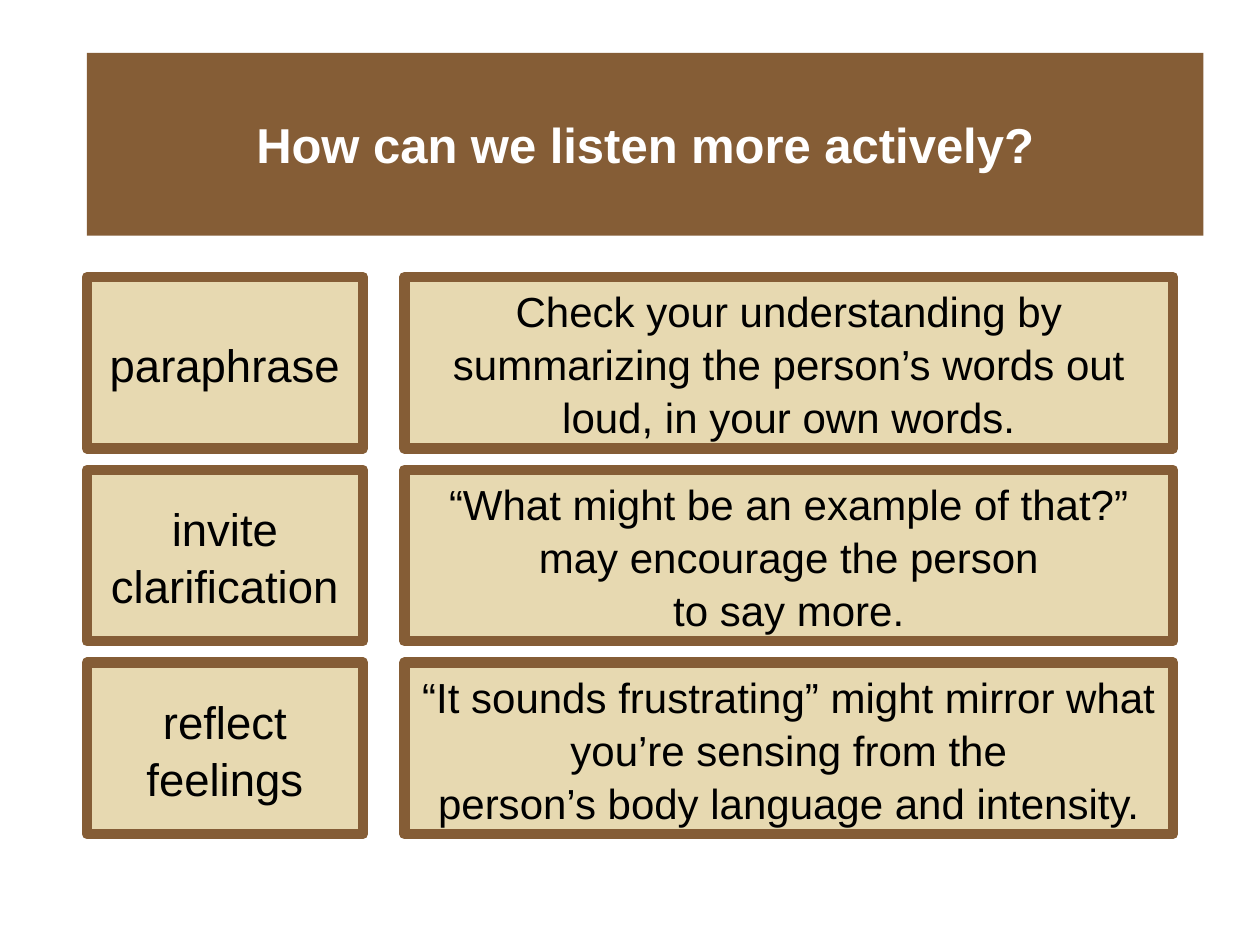
from pptx import Presentation
from pptx.dml.color import RGBColor
from pptx.enum.shapes import MSO_SHAPE
from pptx.enum.text import MSO_ANCHOR, PP_ALIGN
from pptx.util import Inches, Pt

TITLE = "How can we listen more actively?"
TECHNIQUES = [
    ("paraphrase",
     ["Check your understanding by summarizing the person’s words out loud, in your own words."]),
    ("invite clarification",
     ["“What might be an example of that?” may encourage the person", "to say more."]),
    ("reflect feelings",
     ["“It sounds frustrating” might mirror what you’re sensing from the",
      "person’s body language and intensity."]),
]

FONT = "Arial"
BROWN, SAND, WHITE, BLACK = "855D36", "E7D9B1", "FFFFFF", "000000"

# Grid, in inches
LEFT, GAP = 0.69, 0.33
NAME_WIDTH, ADVICE_WIDTH = 2.19, 6.1
ADVICE_LEFT = LEFT + NAME_WIDTH + GAP
FIRST_ROW, ROW_PITCH, ROW_HEIGHT = 2.2, 1.53, 1.36


def color(hex_string):
    return RGBColor.from_string(hex_string)


def write(shape, paragraphs, size, text_color, bold=False, line_spacing=1.05):
    frame = shape.text_frame
    frame.word_wrap = True
    frame.vertical_anchor = MSO_ANCHOR.MIDDLE
    for index, text in enumerate(paragraphs):
        paragraph = frame.add_paragraph() if index else frame.paragraphs[0]
        paragraph.alignment = PP_ALIGN.CENTER
        paragraph.line_spacing = line_spacing
        run = paragraph.add_run()
        run.text = text
        run.font.name = FONT
        run.font.size = Pt(size)
        run.font.bold = bold
        run.font.color.rgb = color(text_color)


def fill(shape, hex_string):
    shape.fill.solid()
    shape.fill.fore_color.rgb = color(hex_string)


def add_box(slide, left, top, width, paragraphs, size):
    box = slide.shapes.add_shape(
        MSO_SHAPE.RECTANGLE, Inches(left), Inches(top), Inches(width), Inches(ROW_HEIGHT))
    box.shadow.inherit = False
    fill(box, SAND)
    box.line.color.rgb = color(BROWN)
    box.line.width = Pt(6)
    write(box, paragraphs, size, BLACK)


def main():
    deck = Presentation()
    deck.slide_width, deck.slide_height = Inches(10), Inches(7.5)
    slide = deck.slides.add_slide(deck.slide_layouts.get_by_name("Title Only"))

    title = slide.shapes.title
    title.left, title.top = Inches(LEFT), Inches(0.42)
    title.width, title.height = Inches(8.86), Inches(1.45)
    fill(title, BROWN)
    write(title, [TITLE], 28, WHITE, bold=True, line_spacing=1.0)

    for row, (name, advice) in enumerate(TECHNIQUES):
        top = FIRST_ROW + row * ROW_PITCH
        add_box(slide, LEFT, top, NAME_WIDTH, [name], 26)
        add_box(slide, ADVICE_LEFT, top, ADVICE_WIDTH, advice, 24)

    deck.save("out.pptx")


if __name__ == "__main__":
    main()
